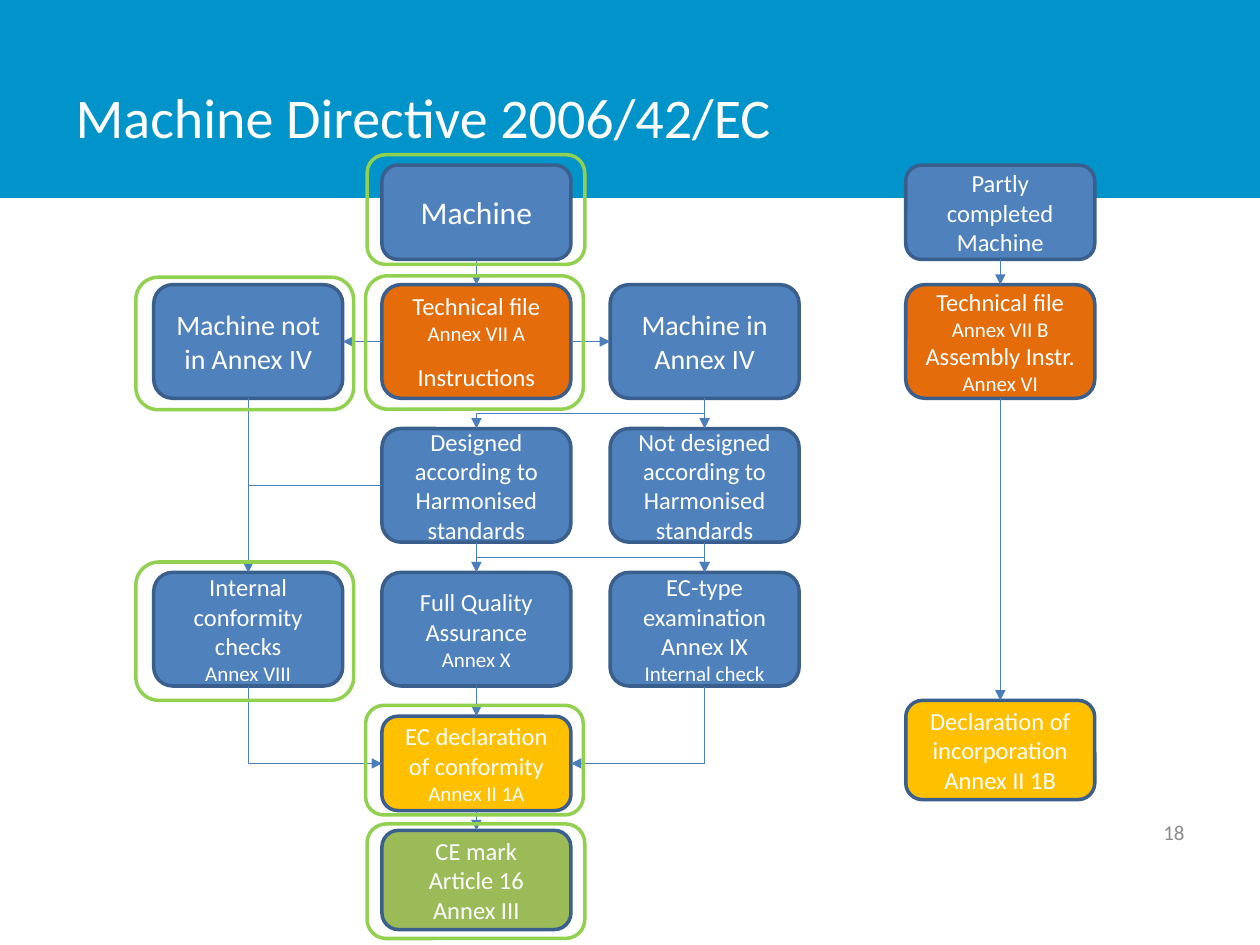
import pptx
import pptx.util
import pptx.dml.color
import pptx.enum.shapes
import pptx.enum.text
import pptx.oxml
import pptx.oxml.ns
from pptx.util import Cm

COLORS = {
    "band": "0094CA", "blue": "4F81BD", "orange": "E46C0A", "yellow": "FFC000",
    "green": "9BBB59", "border": "3A5F8C", "arrow": "4B7EBC", "halo": "92D050",
    "white": "FFFFFF", "grey": "8C8C8C",
}
FONT = "Calibri"
BOX_WIDTH, HALO_WIDTH = 3.81, 4.39
LEFT, MIDDLE, RIGHT = (3.1 + 4.6 * column for column in range(3))
PARTLY = 18.26
TOP_ROW, LAST_ROW = 3.33, 16.74
FILE_ROW, STANDARD_ROW, CHECK_ROW, DECLARATION_ROW = (5.74 + 2.9 * row for row in range(4))
LOW, TALL, FINAL = 1.9, 2.29, 2.0
# Connection sites of a rounded rectangle
TOP, WEST, BOTTOM, EAST = range(4)

Shapes = pptx.enum.shapes.MSO_SHAPE
Connectors = pptx.enum.shapes.MSO_CONNECTOR
Align = pptx.enum.text.PP_ALIGN
Anchor = pptx.enum.text.MSO_ANCHOR
qn = pptx.oxml.ns.qn


def color(name):
    return pptx.dml.color.RGBColor.from_string(COLORS[name])


class FlowPage:
    """Holds the current slide and the style of its flow chart."""

    def __init__(self, deck):
        self.page = deck.slides.add_slide(deck.slide_layouts[5])
        self.shapes = self.page.shapes

    def style(self, para, size, tint="white", align=Align.CENTER):
        para.alignment = align
        para.font.name = FONT
        para.font.size = pptx.util.Pt(size)
        para.font.color.rgb = color(tint)

    def outline(self, preset, left, top, width, height, fill=None, line=None):
        shape = self.shapes.add_shape(preset, Cm(left), Cm(top), Cm(width), Cm(height))
        shape.shadow.inherit = False
        if fill:
            shape.fill.solid()
            shape.fill.fore_color.rgb = color(fill)
        else:
            shape.fill.background()
        if line:
            shape.line.color.rgb = color(line)
            shape.line.width = pptx.util.Pt(2)
        else:
            shape.line.fill.background()
        return shape

    def band(self, height):
        """Draw the coloured strip behind everything else."""
        strip = self.outline(Shapes.RECTANGLE, 0, 0, 25.4, height, "band")
        self.shapes.element.insert(2, strip.element)

    def title(self, text):
        title = self.shapes.title
        title.left, title.top, title.width, title.height = Cm(1.27), Cm(0.76), Cm(19.84), Cm(3.18)
        title.text_frame.text = text
        title.text_frame.vertical_anchor = Anchor.MIDDLE
        self.style(title.text_frame.paragraphs[0], 32, align=Align.LEFT)

    def number(self, text):
        frame = self.shapes.add_textbox(Cm(18.21), Cm(16.26), Cm(5.92), Cm(1.02)).text_frame
        frame.word_wrap = True
        frame.vertical_anchor = Anchor.MIDDLE
        frame.text = text
        self.style(frame.paragraphs[0], 12, "grey", Align.RIGHT)

    def box(self, left, top, height, fill, *lines):
        """Each line is (text, size) or (text, size, space before)."""
        box = self.outline(Shapes.ROUNDED_RECTANGLE, left, top, BOX_WIDTH, height, fill, "border")
        frame = box.text_frame
        frame.word_wrap = True
        frame.vertical_anchor = Anchor.MIDDLE
        for index, (text, size, *gap) in enumerate(lines):
            para = frame.add_paragraph() if index else frame.paragraphs[0]
            para.text = text
            self.style(para, size)
            if gap:
                para.space_before = pptx.util.Pt(gap[0])
        return box

    def halo(self, left, top, height):
        self.outline(Shapes.ROUNDED_RECTANGLE, left, top, HALO_WIDTH, height, line="halo")

    def arrow(self, source, start, target, end, preset=None):
        """Join two boxes; a preset name makes the arrow an elbow."""
        kind = Connectors.ELBOW if preset else Connectors.STRAIGHT
        arrow = self.shapes.add_connector(kind, 0, 0, 0, 0)
        arrow.begin_connect(source, start)
        arrow.end_connect(target, end)
        arrow.line.color.rgb = color("arrow")
        arrow.line.width = pptx.util.Pt(0.75)
        properties = arrow.element.spPr
        head = pptx.oxml.parse_xml(
            '<a:tailEnd %s type="triangle"/>' % pptx.oxml.ns.nsdecls("a"))
        properties.find(qn("a:ln")).append(head)
        properties.append(pptx.oxml.parse_xml("<a:effectLst %s/>" % pptx.oxml.ns.nsdecls("a")))
        if preset:
            properties.find(qn("a:prstGeom")).set("prst", preset)
            if start == BOTTOM:
                self.turn_downward(arrow)

    def turn_downward(self, arrow):
        """Rotate an elbow so that it leaves its box vertically."""
        rightward = arrow.end_x > arrow.begin_x
        left, top, width, height = arrow.left, arrow.top, arrow.width, arrow.height
        arrow.left, arrow.top = left + (width - height) // 2, top + (height - width) // 2
        arrow.width, arrow.height = height, width
        frame = arrow.element.spPr.find(qn("a:xfrm"))
        frame.set("rot", str((270 if rightward else 90) * 60000))
        frame.set("flipH", "1" if rightward else "0")


def main():
    deck = pptx.Presentation()
    deck.slide_width, deck.slide_height = Cm(25.4), Cm(19.05)
    flow = FlowPage(deck)
    flow.band(3.99)
    flow.title("Machine Directive 2006/42/EC")
    flow.number("18")

    machine = flow.box(MIDDLE, TOP_ROW, LOW, "blue", ("Machine", 18))
    partly = flow.box(PARTLY, TOP_ROW, LOW, "blue", ("Partly completed Machine", 14))
    outside = flow.box(LEFT, FILE_ROW, TALL, "blue", ("Machine not in Annex IV", 16))
    technical = flow.box(MIDDLE, FILE_ROW, TALL, "orange", ("Technical file", 14),
                         ("Annex VII A", 12), ("Instructions", 14, 9.6))
    inside = flow.box(RIGHT, FILE_ROW, TALL, "blue", ("Machine in Annex IV", 16))
    assembly = flow.box(PARTLY, FILE_ROW, TALL, "orange", ("Technical file", 14),
                        ("Annex VII B", 12), ("Assembly Instr.", 14), ("Annex VI", 12))
    designed = flow.box(MIDDLE, STANDARD_ROW, TALL, "blue",
                        ("Designed according to Harmonised standards", 14))
    undesigned = flow.box(RIGHT, STANDARD_ROW, TALL, "blue",
                          ("Not designed according to Harmonised standards", 14))
    internal = flow.box(LEFT, CHECK_ROW, TALL, "blue",
                        ("Internal conformity checks", 14), ("Annex VIII", 12))
    quality = flow.box(MIDDLE, CHECK_ROW, TALL, "blue",
                       ("Full Quality Assurance", 14), ("Annex X", 12))
    examination = flow.box(RIGHT, CHECK_ROW, TALL, "blue", ("EC-type examination", 14),
                           ("Annex IX", 14), ("Internal check", 12))
    declaration = flow.box(MIDDLE, DECLARATION_ROW, LOW, "yellow",
                           ("EC declaration of conformity", 14), ("Annex II 1A", 12))
    incorporation = flow.box(PARTLY, 14.12, FINAL, "yellow",
                             ("Declaration of incorporation", 14), ("Annex II 1B", 14))
    mark = flow.box(MIDDLE, LAST_ROW, FINAL, "green",
                    ("CE mark", 14), ("Article 16", 14), ("Annex III", 14))

    for upper, lower in (
        (machine, technical), (partly, assembly), (inside, undesigned),
        (undesigned, examination), (designed, quality), (outside, internal),
        (quality, declaration), (declaration, mark), (assembly, incorporation),
    ):
        flow.arrow(upper, BOTTOM, lower, TOP)
    flow.arrow(technical, WEST, outside, EAST)
    flow.arrow(technical, EAST, inside, WEST)
    flow.arrow(inside, BOTTOM, designed, TOP, "bentConnector3")
    flow.arrow(designed, BOTTOM, examination, TOP, "bentConnector3")
    flow.arrow(designed, WEST, internal, TOP, "bentConnector2")
    flow.arrow(examination, BOTTOM, declaration, EAST, "bentConnector2")
    flow.arrow(internal, BOTTOM, declaration, WEST, "bentConnector2")

    for left, top, height in (
        (7.4, 3.12, 2.21), (7.37, 5.56, 2.69), (2.74, 5.59, 2.67),
        (2.74, 11.33, 2.79), (7.37, 14.22, 2.21), (7.4, 16.61, 2.31),
    ):
        flow.halo(left, top, height)
    deck.save("out.pptx")


if __name__ == "__main__":
    main()
